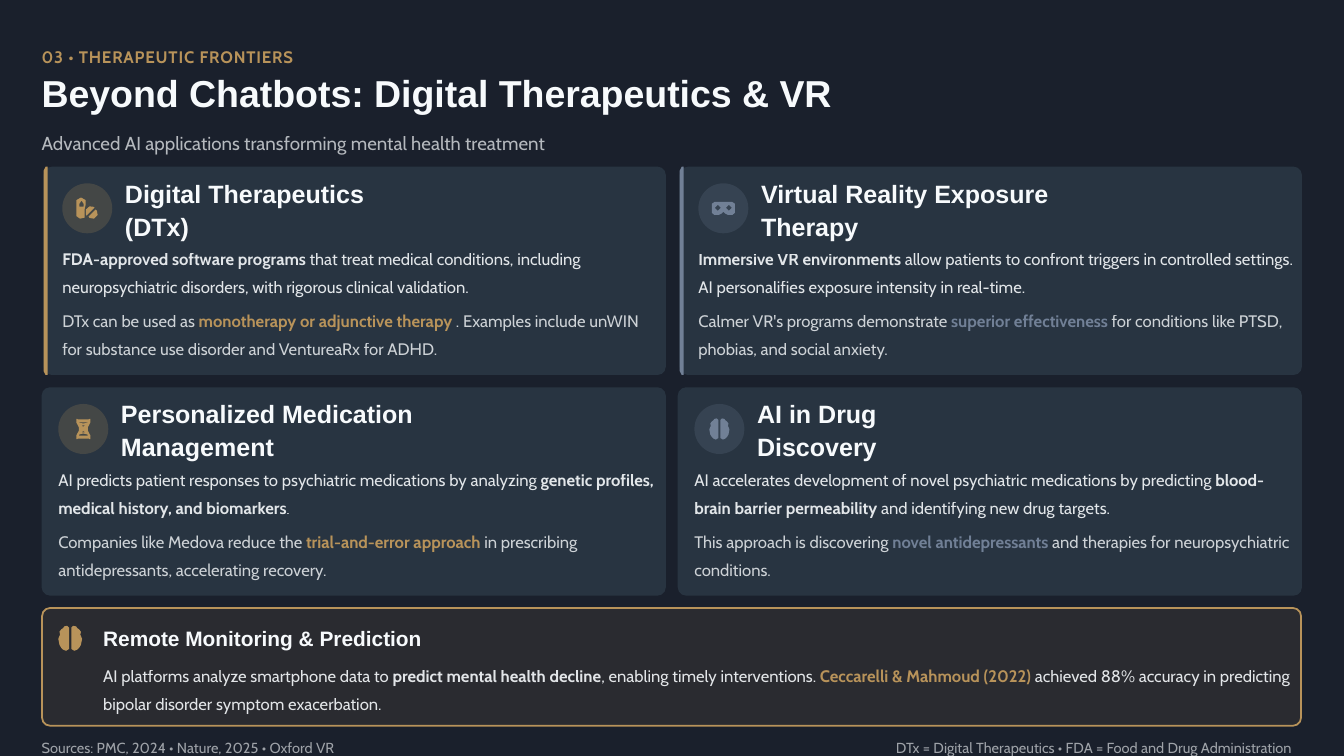
from lxml.etree import SubElement
from pptx import Presentation
from pptx.dml.color import RGBColor
from pptx.enum.shapes import MSO_SHAPE
from pptx.enum.text import MSO_ANCHOR
from pptx.oxml.ns import qn
from pptx.util import Cm, Pt

NAVY, WHITE, SLATE = "1A202C", "F7FAFC", "4A6572"
GOLD, STEEL = "B8935A", "718096"
HEADING_FONT, BODY_FONT = "Arial", "Cabin"
LEFT, TOP, COLUMN_STEP, ROW_STEP = 1.05, 4.2, 16.03, 5.56
CARD_WIDTH, CARD_HEIGHT, BADGE = 15.73, 5.25, 1.26
ACCENT_INSET, ACCENT_WIDTH, CORNER = 0.05, 0.1, 0.21
ICON_UNIT = 0.0254

BRAIN_HALF = [(9, 0), (6, 0), (4, 1), (4, 3), (1, 3), (1, 7), (2, 8), (0, 9), (0, 13),
              (1, 14), (1, 18), (4, 19), (4, 21), (9, 21), (9, 18), (9, 3)]
BRAIN = [BRAIN_HALF, [(20 - x, y) for x, y in BRAIN_HALF]]
PILLS = [
    [(0, 0), (9, 0), (9, 5), (9, 10), (7, 14), (9, 19), (7, 21), (0, 21), (0, 16), (0, 5)],
    [(3, 9), (3, 9), (3, 3), (7, 3), (7, 9), (7, 9)],
    [(10, 18), (10, 18), (18, 10), (18, 10), (16, 8.5), (10, 9), (8.5, 15)],
    [(12, 19), (12, 19), (19, 12), (19, 12), (21.5, 14), (20.5, 20.5), (14, 21.5)],
]
VISOR = [
    [(0, 0), (6, 0), (17, 0), (23, 0), (23, 4), (23, 9), (23, 13), (18, 13), (14, 13),
     (12, 10), (11, 10), (9, 13), (5, 13), (0, 13), (0, 9), (0, 4)],
    [(3, 3), (9, 3), (9, 9), (3, 9)],
    [(14, 3), (20, 3), (20, 9), (14, 9)],
]
HELIX = [
    [(1, 0), (2, 1), (2, 1), (13, 1), (13, 1), (14, 0), (15, 1), (14, 7), (10, 10.5),
     (14, 14), (15, 20), (14, 21), (13, 20), (13, 20), (2, 20), (2, 20), (1, 21),
     (0, 20), (1, 14), (5, 10.5), (1, 7), (0, 1)],
    [(3, 4), (3, 4), (12, 4), (12, 4), (11, 5), (4, 5)],
    [(6, 7), (6, 7), (9, 7), (9, 7), (7.5, 9)],
    [(6, 14), (6, 14), (9, 14), (9, 14), (7.5, 12)],
    [(4, 15), (11, 15), (12, 17), (12, 17), (3, 17), (3, 17)],
]

CARDS = [
    ("Digital Therapeutics (DTx)", 7.62, PILLS,
     [("FDA-approved software programs", "bold"),
      (" that treat medical conditions, including neuropsychiatric disorders, "
       "with rigorous clinical validation.", "")],
     [("DTx can be used as ", ""), ("monotherapy or adjunctive therapy ", GOLD),
      (". Examples include unWIN for substance use disorder and VentureaRx for ADHD.", "")]),
    ("Virtual Reality Exposure Therapy", 9.3, VISOR,
     [("Immersive VR environments", "bold"),
      (" allow patients to confront triggers in controlled settings. "
       "AI personalifies exposure intensity in real-time.", "")],
     [("Calmer VR's programs demonstrate ", ""), ("superior effectiveness ", STEEL),
      ("for conditions like PTSD, phobias, and social anxiety.", "")]),
    ("Personalized Medication Management", 10.92, HELIX,
     [("AI predicts patient responses to psychiatric medications by analyzing ", ""),
      ("genetic profiles, medical history, and biomarkers", "bold"), (".", "")],
     [("Companies like Medova reduce the ", ""), ("trial-and-error approach ", GOLD),
      ("in prescribing antidepressants, accelerating recovery.", "")]),
    ("AI in Drug Discovery", 5.89, BRAIN,
     [("AI accelerates development of novel psychiatric medications by predicting ", ""),
      ("blood-brain barrier permeability", "bold"),
      (" and identifying new drug targets.", "")],
     [("This approach is discovering ", ""), ("novel antidepressants ", STEEL),
      ("and therapies for neuropsychiatric conditions.", "")]),
]


def paint(fill, color, opacity=100):
    fill.solid()
    fill.fore_color.rgb = RGBColor.from_string(color)
    if opacity < 100:
        tint = fill._xPr.find(qn("a:solidFill"))[0]
        SubElement(tint, qn("a:alpha")).set("val", str(opacity * 1000))


def finish(shape, color, opacity=100):
    shape.shadow.inherit = False
    shape.line.fill.background()
    paint(shape.fill, color, opacity)
    return shape


def add_text(page, place, spans, size, spacing, font=BODY_FONT, opacity=100, bold=False):
    box = page.shapes.add_textbox(*map(Cm, place))
    frame = box.text_frame
    frame.word_wrap = True
    frame.vertical_anchor = MSO_ANCHOR.MIDDLE
    frame.margin_left = frame.margin_right = frame.margin_top = frame.margin_bottom = 0
    para = frame.paragraphs[0]
    para.line_spacing = spacing
    for text, style in spans:
        span = para.add_run()
        span.text = text
        span.font.name = font
        span.font.size = Pt(size)
        span.font.bold = bold or style != ""
        accented = style in (GOLD, STEEL)
        paint(span.font.fill, style if accented else WHITE, 100 if accented else opacity)
    return para


def soften(corners):
    following = corners[1:] + corners[:1]
    return [((a[0] + b[0]) / 2, (a[1] + b[1]) / 2) for a, b in zip(corners, following)]


def add_outline(page, left, top, contours, unit, color):
    builder = None
    for contour in contours:
        points = [(x * unit * 1000, y * unit * 1000) for x, y in soften(contour)]
        if builder is None:
            builder = page.shapes.build_freeform(*points[0], scale=Cm(0.001))
        else:
            builder.move_to(*points[0])
        builder.add_line_segments(points[1:], close=True)
    finish(builder.convert_to_shape(Cm(left), Cm(top)), color)


def add_panel(page, left, top, width, height, color, opacity):
    panel = page.shapes.add_shape(MSO_SHAPE.ROUNDED_RECTANGLE,
                                  Cm(left), Cm(top), Cm(width), Cm(height))
    panel.adjustments[0] = CORNER / height
    return finish(panel, color, opacity)


def add_accent(page, left, top, height, color):
    curve = 2 * ACCENT_WIDTH
    strip = [(ACCENT_WIDTH, 0)] * 2 + [(ACCENT_WIDTH, height)] * 2
    strip += [(0, height), (0, height - curve), (0, curve), (0, 0)]
    add_outline(page, left, top, [strip], 1, color)


def add_badge(page, left, top, icon, color):
    badge = page.shapes.add_shape(MSO_SHAPE.OVAL, Cm(left), Cm(top), Cm(BADGE), Cm(BADGE))
    finish(badge, color, 20)
    width, height = (max(point[axis] for contour in icon for point in contour) * ICON_UNIT
                     for axis in (0, 1))
    add_outline(page, left + (BADGE - width) / 2, top + (BADGE - height) / 2,
                icon, ICON_UNIT, color)


def add_card(page, index, title, title_width, icon, lead, detail):
    row, column = divmod(index, 2)
    color = (GOLD, STEEL)[column]
    left, top = LEFT + column * COLUMN_STEP, TOP + row * ROW_STEP
    inset = ACCENT_INSET if row == 0 else 0
    text_left = left + 0.42 + 2 * inset
    add_panel(page, left + inset, top, CARD_WIDTH - inset, CARD_HEIGHT, SLATE, 30)
    if row == 0:
        add_accent(page, left + inset, top, CARD_HEIGHT, color)
    add_badge(page, text_left, top + 0.42, icon, color)
    add_text(page, (text_left + 1.58, top + 0.63, title_width, 0.83), [(title, "")],
             17.9, 1.1, HEADING_FONT, bold=True)
    text_width = left + CARD_WIDTH - 0.2 - text_left
    add_text(page, (text_left, top + 1.9, text_width, 1.37), lead, 11.9, 1.4, opacity=90)
    add_text(page, (text_left, top + 3.46, text_width, 1.37), detail, 11.9, 1.4, opacity=80)


def add_header(page):
    section = add_text(page, (LEFT, 1.04, 31.98, 0.64), [("03 • THERAPEUTIC FRONTIERS", GOLD)],
                       11.9, 1.3)
    section.runs[0].font._element.set("spc", "60")
    add_text(page, (LEFT, 1.88, 32.23, 1.04),
             [("Beyond Chatbots: Digital Therapeutics & VR", "")],
             26.8, 0.9, HEADING_FONT, bold=True)
    add_text(page, (LEFT, 3.15, 32, 0.74),
             [("Advanced AI applications transforming mental health treatment", "")],
             13.4, 1.3, opacity=70)


def add_monitoring(page):
    panel = add_panel(page, 1.06, 15.32, 31.73, 2.97, GOLD, 10)
    paint(panel.line.fill, GOLD)
    panel.line.width = Pt(1.25)
    add_outline(page, 1.47, 15.77, BRAIN, 0.03, GOLD)
    add_text(page, (2.6, 15.65, 30.12, 0.74), [("Remote Monitoring & Prediction", "")],
             14.9, 1.2, HEADING_FONT, bold=True)
    add_text(page, (2.6, 16.61, 30.07, 1.37),
             [("AI platforms analyze smartphone data to ", ""),
              ("predict mental health decline", "bold"),
              (", enabling timely interventions. ", ""),
              ("Ceccarelli & Mahmoud (2022) ", GOLD),
              ("achieved 88% accuracy in predicting bipolar disorder symptom exacerbation.", "")],
             11.9, 1.4, opacity=90)


def add_footer(page):
    for left, width, text in (
            (LEFT, 7.7, "Sources: PMC, 2024 • Nature, 2025 • Oxford VR"),
            (22.58, 10.41, "DTx = Digital Therapeutics • FDA = Food and Drug Administration")):
        add_text(page, (left, 18.52, width, 0.53), [(text, "")], 10.4, 1.2, opacity=60)


def main():
    deck = Presentation()
    deck.slide_width, deck.slide_height = Cm(33.87), Cm(19.05)
    page = deck.slides.add_slide(deck.slide_layouts[6])
    paint(page.background.fill, NAVY)
    add_header(page)
    for index, card in enumerate(CARDS):
        add_card(page, index, *card)
    add_monitoring(page)
    add_footer(page)
    deck.save("out.pptx")


if __name__ == "__main__":
    main()
